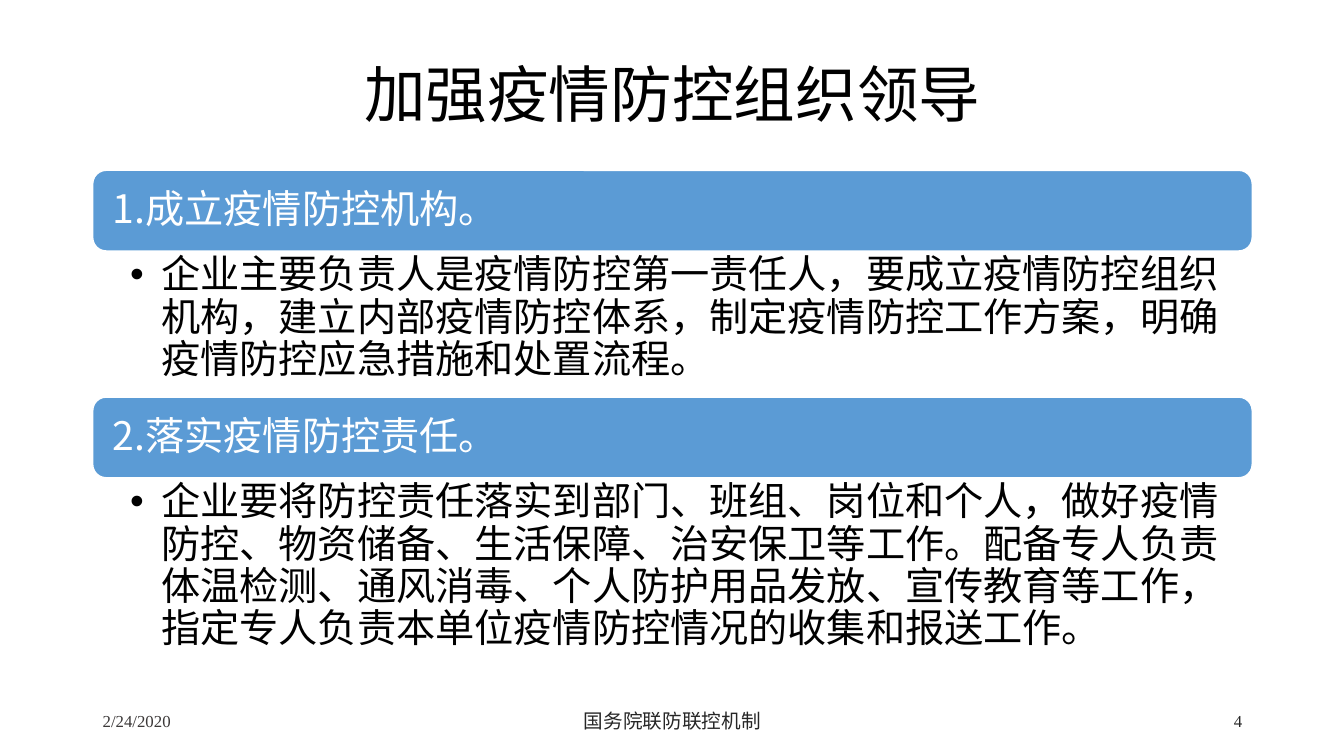
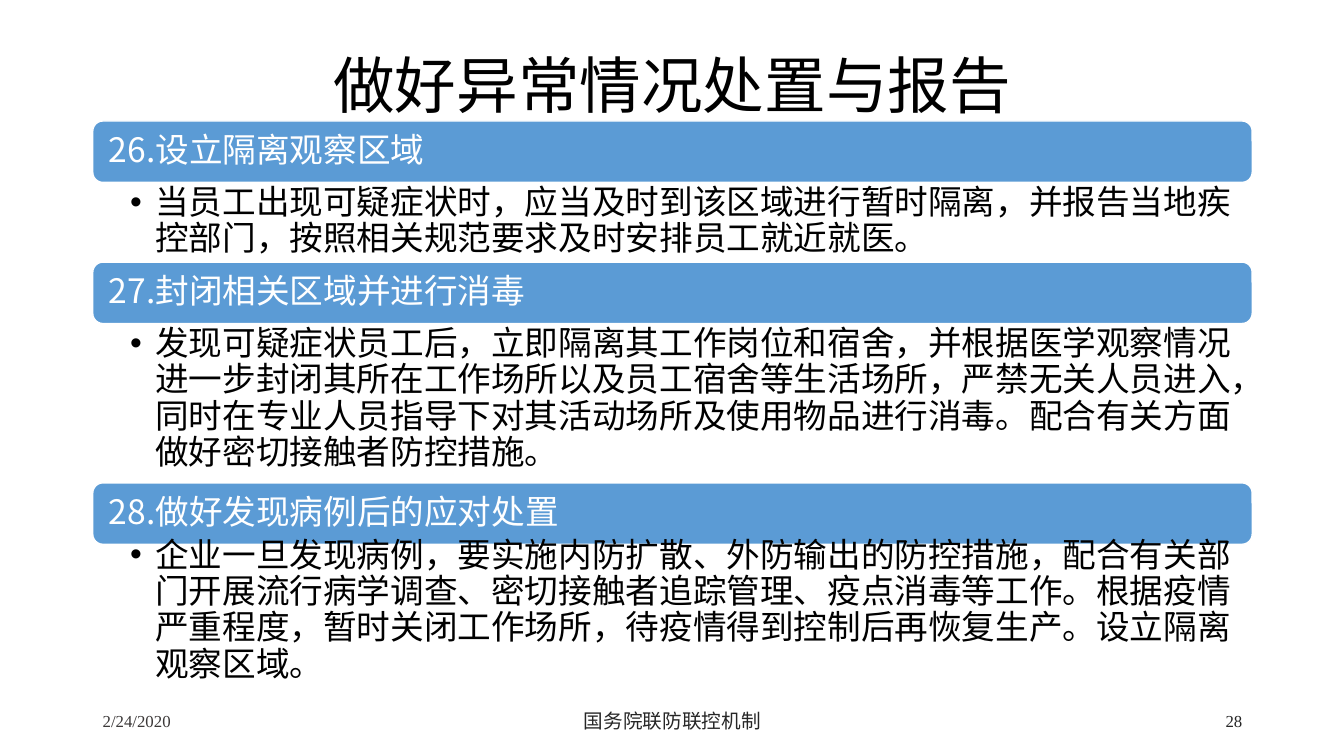
from dataclasses import dataclass
from typing import Any

from lxml.etree import SubElement
from pptx import Presentation
from pptx.dml.color import RGBColor
from pptx.enum.shapes import MSO_SHAPE
from pptx.enum.text import MSO_ANCHOR, MSO_AUTO_SIZE, PP_ALIGN
from pptx.oxml.ns import qn
from pptx.util import Inches, Pt


@dataclass(frozen=True)
class TextStyle:
    size: int
    color: str
    font: str = "Noto Sans CJK SC"
    align: Any = PP_ALIGN.LEFT
    spacing: float = 1.0


@dataclass(frozen=True)
class Theme:
    band: str = "5B9BD5"
    white: str = "FFFFFF"
    black: str = "000000"
    left: float = 0.92
    width: float = 11.5
    title_height: float = 1.45
    title: TextStyle = TextStyle(44, "000000", align=PP_ALIGN.CENTER, spacing=0.9)
    date: TextStyle = TextStyle(12, "3B3838", "Times New Roman")
    source: TextStyle = TextStyle(14, "262626", align=PP_ALIGN.CENTER)
    number: TextStyle = TextStyle(12, "262626", "Times New Roman", PP_ALIGN.RIGHT)


THEME = Theme()


@dataclass(frozen=True)
class Density:
    """Sizes that change together with the amount of text on a page."""
    size: int
    band_height: float
    band_inset: float
    bullet_indent: float
    body_right: float
    body_inset: float


ROOMY = Density(28, 0.8, 0.16, 0.31, 0.22, 0.04)
TIGHT = Density(24, 0.61, 0.13, 0.25, 0.19, 0.03)


@dataclass(frozen=True)
class Section:
    heading: str
    body: str
    body_height: float
    band_shift: float = 0.0


@dataclass(frozen=True)
class Page:
    title: str
    title_top: float
    sections_top: float
    number: str
    density: Density
    sections: tuple[Section, ...]


PAGES = (
    Page("加强疫情防控组织领导", 0.24, 1.69, "4", ROOMY, (
        Section("1.成立疫情防控机构。",
                "企业主要负责人是疫情防控第一责任人，要成立疫情防控组织机构，建立内部疫情防控体系，"
                "制定疫情防控工作方案，明确疫情防控应急措施和处置流程。", 1.45),
        Section("2.落实疫情防控责任。",
                "企业要将防控责任落实到部门、班组、岗位和个人，做好疫情防控、物资储备、生活保障、"
                "治安保卫等工作。配备专人负责体温检测、通风消毒、个人防护用品发放、宣传教育等工作，"
                "指定专人负责本单位疫情防控情况的收集和报送工作。", 1.9),
    )),
    Page("做好异常情况处置与报告", 0.15, 1.2, "28", TIGHT, (
        Section("26.设立隔离观察区域",
                "当员工出现可疑症状时，应当及时到该区域进行暂时隔离，并报告当地疾控部门，"
                "按照相关规范要求及时安排员工就近就医。", 0.79),
        Section("27.封闭相关区域并进行消毒",
                "发现可疑症状员工后，立即隔离其工作岗位和宿舍，并根据医学观察情况进一步封闭其所在"
                "工作场所以及员工宿舍等生活场所，严禁无关人员进入，同时在专业人员指导下对其活动场所"
                "及使用物品进行消毒。配合有关方面做好密切接触者防控措施。", 1.49),
        Section("28.做好发现病例后的应对处置",
                "企业一旦发现病例，要实施内防扩散、外防输出的防控措施，配合有关部门开展流行病学调查、"
                "密切接触者追踪管理、疫点消毒等工作。根据疫情严重程度，暂时关闭工作场所，"
                "待疫情得到控制后再恢复生产。设立隔离观察区域。", 1.49, band_shift=0.09),
    )),
)


def apply(target: Any, values: dict[str, Any]) -> None:
    for name, value in values.items():
        setattr(target, name, value)


def place(box: Any, left: float, top: float, width: float, height: float) -> None:
    apply(box, {"left": Inches(left), "top": Inches(top),
                "width": Inches(width), "height": Inches(height)})


def write(box: Any, text: str, style: TextStyle, anchor: Any = MSO_ANCHOR.MIDDLE,
          insets: tuple[float, float, float, float] = (0.1, 0.05, 0.1, 0.05)) -> Any:
    """Fill a box with one paragraph; insets run left, top, right, bottom."""
    frame = box.text_frame
    left, top, right, bottom = map(Inches, insets)
    apply(frame, {"word_wrap": True, "auto_size": MSO_AUTO_SIZE.NONE,
                  "vertical_anchor": anchor, "margin_left": left, "margin_top": top,
                  "margin_right": right, "margin_bottom": bottom})
    para = frame.paragraphs[0]
    apply(para, {"alignment": style.align, "line_spacing": style.spacing,
                 "space_before": Pt(0)})
    span = para.add_run()
    span.text = text
    apply(span.font, {"size": Pt(style.size), "bold": False, "name": style.font})
    span.font.color.rgb = RGBColor.from_string(style.color)
    properties = span._r.get_or_add_rPr()
    properties.set("lang", "zh-CN")
    SubElement(properties, qn("a:ea"), typeface=style.font)
    return para


def add_bullet(para: Any, indent: float) -> None:
    properties = para._p.get_or_add_pPr()
    properties.set("marL", str(Inches(indent)))
    properties.set("indent", str(-Inches(indent)))
    SubElement(properties, qn("a:buFont"), typeface="Arial")
    SubElement(properties, qn("a:buChar"), char="•")


def add_band(slide: Any, heading: str, top: float, density: Density) -> Any:
    band = slide.shapes.add_shape(
        MSO_SHAPE.ROUNDED_RECTANGLE, Inches(THEME.left), Inches(top),
        Inches(THEME.width), Inches(density.band_height))
    band.shadow.inherit = False
    band.fill.solid()
    band.fill.fore_color.rgb = RGBColor.from_string(THEME.band)
    band.line.color.rgb = RGBColor.from_string(THEME.white)
    band.line.width = Pt(1)
    inset = density.band_inset
    write(band, heading, TextStyle(density.size, THEME.white, spacing=0.9),
          insets=(inset, inset, inset, inset))
    return band


def add_sections(slide: Any, page: Page, bodies: list[Any]) -> None:
    """Stack the sections, each a band with a list placeholder in front of it."""
    density = page.density
    top = page.sections_top
    for section, body in zip(page.sections, bodies):
        band = add_band(slide, section.heading, top + section.band_shift, density)
        top += density.band_height
        place(body, THEME.left, top, THEME.width, section.body_height)
        para = write(body, section.body, TextStyle(density.size, THEME.black, spacing=0.9),
                     MSO_ANCHOR.TOP,
                     (0.37, density.body_inset, density.body_right, density.body_inset))
        add_bullet(para, density.bullet_indent)
        band.element.addnext(body.element)
        top += section.body_height


def add_footer(slide: Any, number: str) -> None:
    for left, width, text, style in (
        (0.92, 3, "2/24/2020", THEME.date),
        (4.42, 4.5, "国务院联防联控机制", THEME.source),
        (9.42, 3, number, THEME.number),
    ):
        box = slide.shapes.add_textbox(Inches(left), Inches(6.95), Inches(width), Inches(0.4))
        write(box, text, style)


def add_page(deck: Any, page: Page) -> None:
    slide = deck.slides.add_slide(deck.slide_layouts.get_by_name("Comparison"))
    title, *bodies = slide.placeholders
    place(title, THEME.left, page.title_top, THEME.width, THEME.title_height)
    write(title, page.title, THEME.title)
    for spare in bodies[len(page.sections):]:
        spare.element.getparent().remove(spare.element)
    add_sections(slide, page, bodies)
    add_footer(slide, page.number)


def main() -> None:
    deck = Presentation()
    apply(deck, {"slide_width": Inches(13.33), "slide_height": Inches(7.5)})
    for page in PAGES:
        add_page(deck, page)
    deck.save("out.pptx")


if __name__ == "__main__":
    main()
